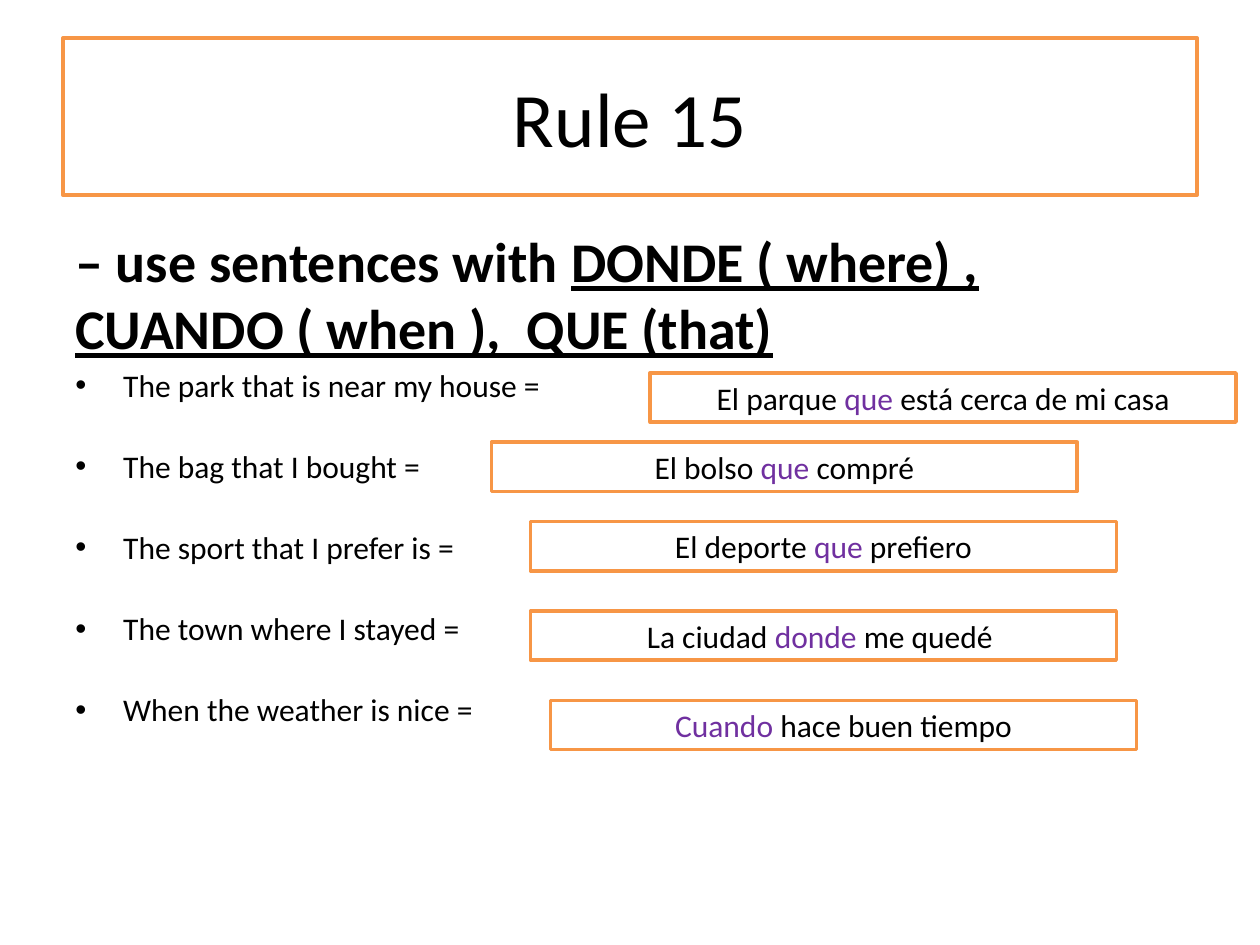
from dataclasses import dataclass

from lxml import etree
from pptx import Presentation
from pptx import util as u
from pptx.dml.color import RGBColor
from pptx.enum import shapes, text
from pptx.oxml.ns import qn


@dataclass(frozen=True)
class Theme:
    """Colours, type sizes and measures of the lesson."""
    font: str = "Calibri"
    ink: str = "000000"
    paper: str = "FFFFFF"
    border: str = "F79646"
    accent: str = "7030A0"
    title: int = 44
    heading: int = 32
    body: int = 18
    border_width: int = 2
    indent: float = 0.38


class Lesson:
    """Holds the theme and the current slide and adds elements to it."""

    def __init__(self, theme, slide):
        self.theme = theme
        self.slide = slide

    def add_spans(self, para, spans, size, **style):
        """Append (wording, colour, extra format) spans to a paragraph."""
        for wording, colour, extra in spans:
            span = para.add_run()
            span.text = wording
            span.font.color.rgb = RGBColor.from_string(colour)
            values = {"name": self.theme.font, "size": u.Pt(size), **style, **extra}
            for name, value in values.items():
                setattr(span.font, name, value)

    def framed(self, place, spans, size):
        """Add a bordered rectangle with centred text."""
        box = self.slide.shapes.add_shape(
            shapes.MSO_SHAPE.RECTANGLE, *map(u.Inches, place))
        box.shadow.inherit = False
        box.fill.solid()
        box.fill.fore_color.rgb = RGBColor.from_string(self.theme.paper)
        box.line.color.rgb = RGBColor.from_string(self.theme.border)
        box.line.width = u.Pt(self.theme.border_width)
        frame = box.text_frame
        frame.word_wrap = True
        frame.vertical_anchor = text.MSO_ANCHOR.MIDDLE
        para = frame.paragraphs[0]
        para.alignment = text.PP_ALIGN.CENTER
        self.add_spans(para, spans, size)

    def bullet(self, para):
        """Give a paragraph a hanging bullet."""
        indent = u.Inches(self.theme.indent)
        properties = para._p.get_or_add_pPr()
        for name, value in {"marL": indent, "indent": -indent}.items():
            properties.set(name, str(value))
        font = etree.SubElement(properties, qn("a:buFont"))
        font.set("typeface", "Arial")
        etree.SubElement(properties, qn("a:buChar")).set("char", "•")

    def phrases(self, place, heading, lines, gaps):
        """Add a bold heading followed by spaced bullets."""
        box = self.slide.shapes.add_textbox(*map(u.Inches, place))
        frame = box.text_frame
        frame.word_wrap = True
        heading_gap, first_gap, other_gap = gaps
        para = frame.paragraphs[0]
        para.space_before = u.Pt(heading_gap)
        self.add_spans(para, heading, self.theme.heading, bold=True)
        for index, line in enumerate(lines):
            para = frame.add_paragraph()
            para.space_before = u.Pt(other_gap if index else first_gap)
            self.bullet(para)
            self.add_spans(para, [(line, self.theme.ink, {})], self.theme.body)


def main():
    """Build the grammar rule slide."""
    deck = Presentation()
    deck.slide_width, deck.slide_height = u.Inches(10), u.Inches(7.5)
    theme = Theme()
    lesson = Lesson(theme, deck.slides.add_slide(deck.slide_layouts[6]))

    lesson.framed((0.5, 0.3, 9, 1.25), [("Rule 15", theme.ink, {})], theme.title)
    heading = [
        ("– use sentences with ", theme.ink, {}),
        ("DONDE ( where) , CUANDO ( when ),  QUE (that)", theme.ink,
         {"underline": True}),
    ]
    english = [
        "The park that is near my house =",
        "The bag that I bought =",
        "The sport that I prefer is =",
        "The town where I stayed =",
        "When the weather is nice =",
    ]
    lesson.phrases((0.5, 1.75, 9, 4.91), heading, english, (5, 2.75, 24.75))

    answers = [
        (5.16, 2.96, "El parque ", "que ", "está cerca de mi casa"),
        (3.9, 3.51, "El bolso ", "que ", "compré"),
        (4.21, 4.14, "El deporte ", "que ", "prefiero"),
        (4.21, 4.85, "La ciudad ", "donde", " me quedé "),
        (4.37, 5.56, "", "Cuando ", "hace buen tiempo"),
    ]
    colours = (theme.ink, theme.accent, theme.ink)
    for left, top, *parts in answers:
        spans = [(part, colour, {}) for part, colour in zip(parts, colours) if part]
        lesson.framed((left, top, 4.65, 0.39), spans, theme.body)

    deck.save("out.pptx")


if __name__ == "__main__":
    main()
